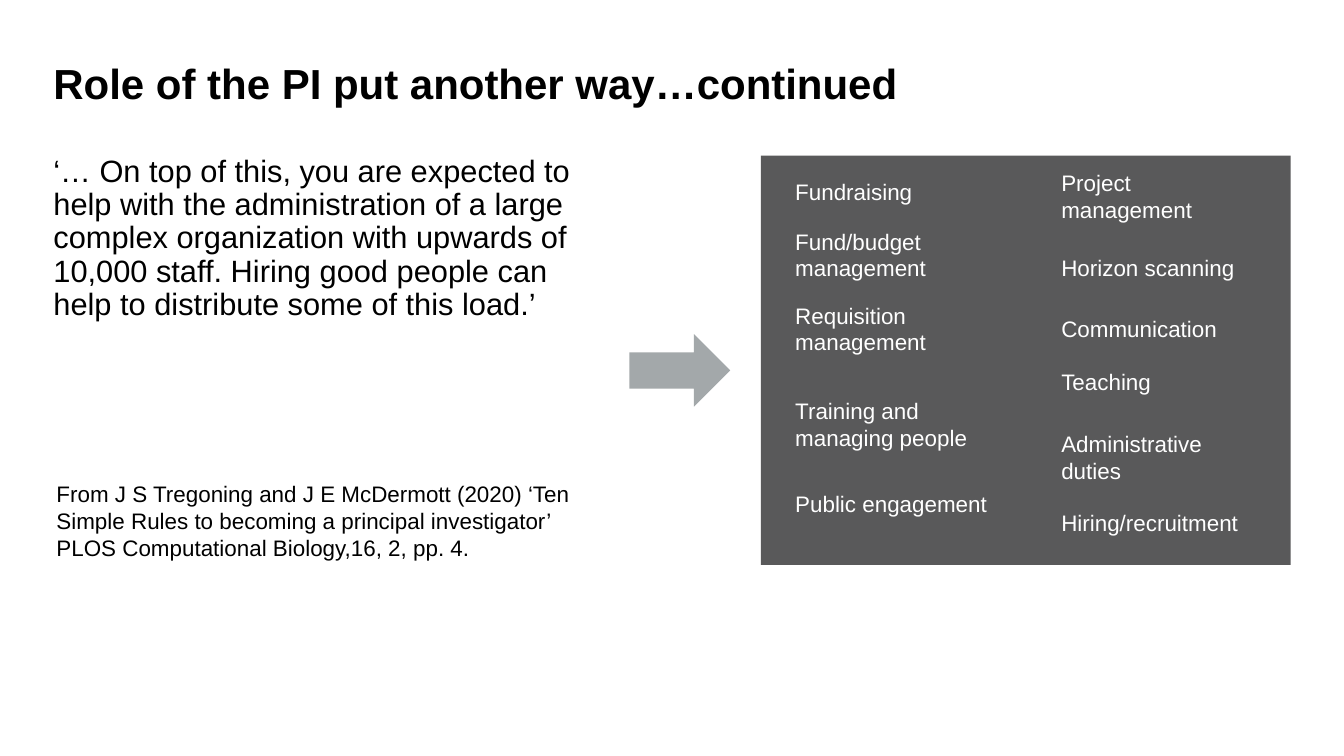
from dataclasses import dataclass

import pptx
import pptx.dml.color
import pptx.enum.shapes
import pptx.enum.text
import pptx.util

EMU_PER_PX = 9144  # 100 px to the inch
COLORS = {"black": "000000", "white": "FFFFFF", "panel": "59595A", "arrow": "A3A8AA"}
MARGIN = 106
TEXT_WIDTH = 1092
CONTENT_TOP = 309
INSET = 6
LABEL_WIDTH = 400
LINE_HEIGHT = 54

ANCHOR = pptx.enum.text.MSO_ANCHOR
SHAPE = pptx.enum.shapes.MSO_SHAPE


@dataclass(frozen=True)
class Box:
    left: int
    top: int
    width: int
    height: int

    def emu(self) -> list[int]:
        return [px * EMU_PER_PX for px in (self.left, self.top, self.width, self.height)]


@dataclass(frozen=True)
class Duty:
    text: str
    top: int
    lines: int = 1


DUTY_COLUMNS = {
    1572: [
        Duty("Fundraising", 347),
        Duty("Fund/budget management", 445, 2),
        Duty("Requisition management", 592, 2),
        Duty("Training and managing people", 781, 2),
        Duty("Public engagement", 967),
    ],
    2100: [
        Duty("Project management", 329, 2),
        Duty("Horizon scanning", 498),
        Duty("Communication", 619),
        Duty("Teaching", 725),
        Duty("Administrative duties", 847, 2),
        Duty("Hiring/recruitment", 1003),
    ],
}


def rgb(name: str) -> pptx.dml.color.RGBColor:
    return pptx.dml.color.RGBColor.from_string(COLORS[name])


def write_text(shape, text: str, *, size: int = 32, color: str = "black", bold: bool = False,
               inset: int = INSET, anchor=ANCHOR.MIDDLE, line_spacing: float = 1.0) -> None:
    frame = shape.text_frame
    frame.word_wrap = True
    frame.auto_size = pptx.enum.text.MSO_AUTO_SIZE.NONE
    frame.vertical_anchor = anchor
    frame.margin_left = frame.margin_right = inset * EMU_PER_PX
    frame.margin_top = frame.margin_bottom = inset * EMU_PER_PX
    paragraph = frame.paragraphs[0]
    paragraph.alignment = pptx.enum.text.PP_ALIGN.LEFT
    paragraph.line_spacing = line_spacing
    run = paragraph.add_run()
    run.text = text
    run.font.name = "Arial"
    run.font.size = pptx.util.Pt(size)
    run.font.bold = bold
    run.font.color.rgb = rgb(color)


def add_text(slide, box: Box, text: str, **text_format) -> None:
    write_text(slide.shapes.add_textbox(*box.emu()), text, **text_format)


def add_filled_shape(slide, kind, box: Box, color: str) -> None:
    shape = slide.shapes.add_shape(kind, *box.emu())
    shape.shadow.inherit = False
    shape.fill.solid()
    shape.fill.fore_color.rgb = rgb(color)
    shape.line.fill.background()


def add_title(slide, box: Box, text: str) -> None:
    title = slide.shapes.title
    title.left, title.top, title.width, title.height = box.emu()
    write_text(title, text, size=60, bold=True, inset=0)


def add_duties(slide) -> None:
    for left, duties in DUTY_COLUMNS.items():
        for duty in duties:
            height = duty.lines * LINE_HEIGHT + 2 * INSET
            add_text(slide, Box(left, duty.top, LABEL_WIDTH, height), duty.text, color="white")


def main() -> None:
    presentation = pptx.Presentation()
    presentation.slide_width = 2667 * EMU_PER_PX
    presentation.slide_height = 1500 * EMU_PER_PX
    slide = presentation.slides.add_slide(presentation.slide_layouts.get_by_name("Title Only"))

    add_title(slide, Box(MARGIN, 111, 2456, 106), "Role of the PI put another way…continued")
    add_text(
        slide, Box(MARGIN, CONTENT_TOP, TEXT_WIDTH, 298),
        "‘… On top of this, you are expected to help with the administration of a large complex "
        "organization with upwards of 10,000 staff. Hiring good people can help to distribute "
        "some of this load.’",
        size=44, inset=0, anchor=ANCHOR.TOP, line_spacing=0.9,
    )
    add_filled_shape(slide, SHAPE.RECTANGLE, Box(1510, CONTENT_TOP, 1051, 812), "panel")
    add_duties(slide)
    add_filled_shape(slide, SHAPE.RIGHT_ARROW, Box(1249, 663, 200, 144), "arrow")
    add_text(
        slide, Box(MARGIN, 947, TEXT_WIDTH, 173),
        "From J S Tregoning and J E McDermott (2020) ‘Ten Simple Rules to becoming a principal "
        "investigator’ PLOS Computational Biology,16, 2, pp. 4.",
    )
    presentation.save("out.pptx")


if __name__ == "__main__":
    main()
